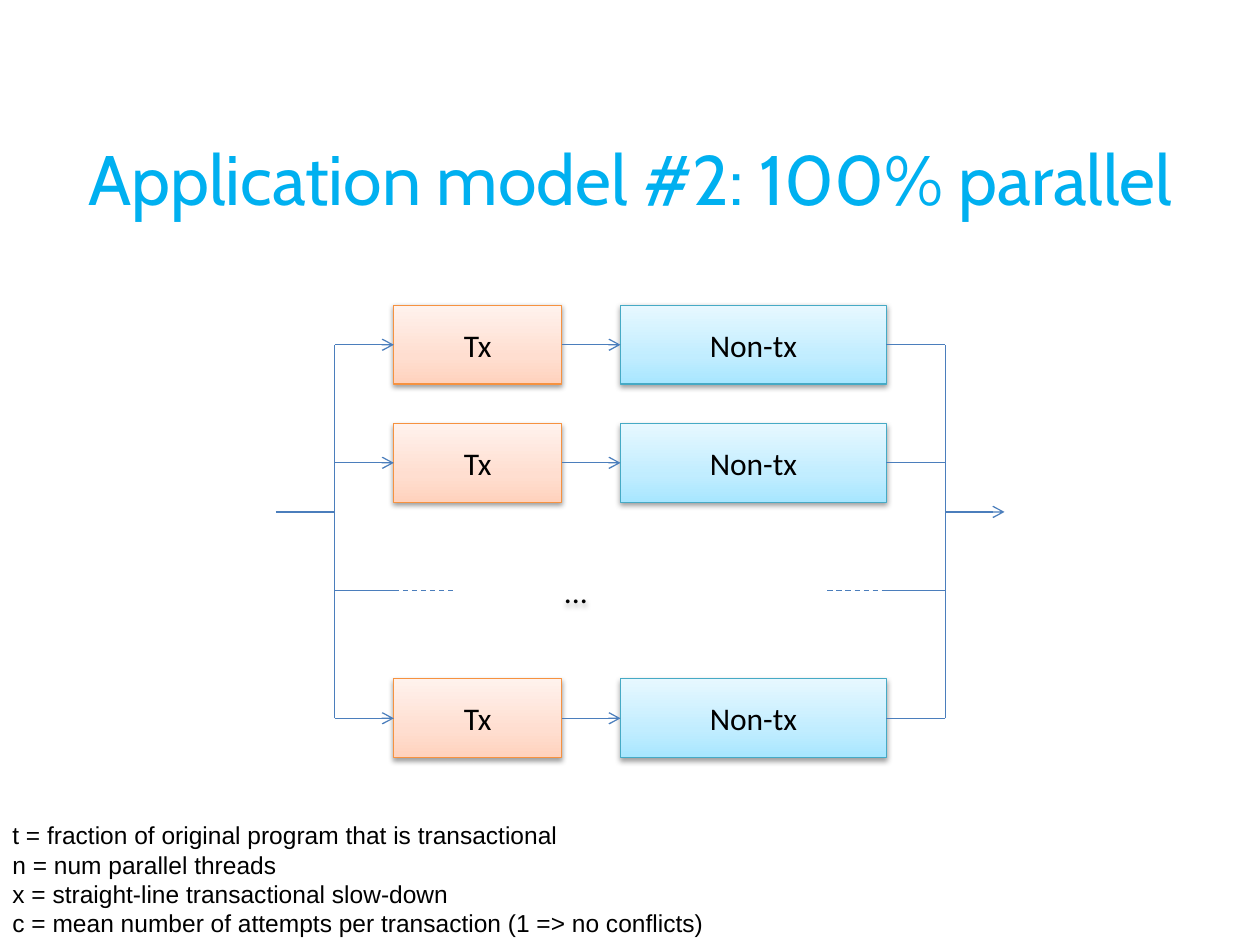
from copy import deepcopy

from lxml.etree import SubElement as Sub
from pptx import Presentation
from pptx.dml.color import RGBColor as RGB
from pptx.enum.dml import MSO_LINE as Dash
from pptx.enum.shapes import MSO_CONNECTOR as Conn, MSO_SHAPE as Kind
from pptx.enum.text import MSO_ANCHOR as Anchor, MSO_AUTO_SIZE as Auto, PP_ALIGN as Align
from pptx.oxml.ns import qn
from pptx.util import Cm, Pt

HUES = {
    "title": "00B0F0", "text": "000000", "wire": "4B7EBC",
    "tx": "F69240", "non": "46AAC5",
}
FADES = {
    "tx": ["FFD2BD", "FFDED0", "FFF2ED"],
    "non": ["A7E6FF", "C1EDFF", "E7F8FF"],
}
STOPS = [0, 0.35, 1]


def write(frame, text, size=18, font="Calibri", hue="text",
          align=Align.CENTER, anchor=Anchor.MIDDLE, wrap=True):
    frame.text = text
    frame.word_wrap = wrap
    frame.vertical_anchor = anchor
    for para in frame.paragraphs:
        para.alignment = align
        para.font.size = Pt(size)
        para.font.name = font
        para.font.color.rgb = RGB.from_string(HUES[hue])


class Deck:
    def __init__(self):
        self.prs = Presentation()
        self.prs.slide_width, self.prs.slide_height = Cm(25.4), Cm(19.05)
        self.slide = self.prs.slides.add_slide(self.prs.slide_layouts[5])

    def title(self, text, x, y, w, h):
        box = self.slide.shapes.title
        box.left, box.top, box.width, box.height = Cm(x), Cm(y), Cm(w), Cm(h)
        write(box.text_frame, text, size=40, font="Cabin", hue="title")

    def text(self, text, x, y, w, h, **style):
        box = self.slide.shapes.add_textbox(Cm(x), Cm(y), Cm(w), Cm(h))
        write(box.text_frame, text, **style)
        return box

    def shade(self, shape):
        shape.shadow.inherit = False
        effects = shape._element.spPr.find(qn("a:effectLst"))
        outer = Sub(effects, qn("a:outerShdw"), blurRad=str(Pt(3.1)),
                    dist=str(Pt(1.6)), dir="5400000", rotWithShape="0")
        tone = Sub(outer, qn("a:srgbClr"), val="000000")
        Sub(tone, qn("a:alpha"), val="38000")

    def box(self, text, kind, x, y, w, h):
        shape = self.slide.shapes.add_shape(Kind.RECTANGLE, Cm(x), Cm(y), Cm(w), Cm(h))
        shape.fill.gradient()
        shape.fill.gradient_angle = 90
        # A third stop joins the two that a new gradient has
        stops = shape._element.spPr.find(".//" + qn("a:gsLst"))
        stops.insert(1, deepcopy(stops[0]))
        for stop, place, tone in zip(shape.fill.gradient_stops, STOPS, FADES[kind]):
            stop.position = place
            stop.color.rgb = RGB.from_string(tone)
        shape.line.color.rgb = RGB.from_string(HUES[kind])
        shape.line.width = Pt(0.75)
        self.shade(shape)
        write(shape.text_frame, text)

    def wire(self, x1, y1, x2, y2, arrow=False, dash=False):
        wire = self.slide.shapes.add_connector(
            Conn.STRAIGHT, Cm(x1), Cm(y1), Cm(x2), Cm(y2))
        wire.line.color.rgb = RGB.from_string(HUES["wire"])
        wire.line.width = Pt(0.75)
        if dash:
            wire.line.dash_style = Dash.DASH
        props = wire._element.spPr
        if arrow:
            Sub(props.find(qn("a:ln")), qn("a:tailEnd"), type="arrow")
        Sub(props, qn("a:effectLst"))


def main():
    deck = Deck()
    deck.title("Application model #2: 100% parallel", 0, 1.98, 25.4, 3.18)

    # Columns, one gap apart, and row centres
    gap, high = 1.19, 1.59
    tx, tx_w, non_w = 7.94, 3.38, 5.36
    tx_end = tx + tx_w
    non = tx_end + gap
    end = non + non_w
    fork, join = tx - gap, end + gap
    rows = [6.95, 9.33, 14.48]
    more, port = 11.91, 10.32

    # Parallel threads
    for y in rows:
        deck.box("Tx", "tx", tx, y - high / 2, tx_w, high)
        deck.box("Non-tx", "non", non, y - high / 2, non_w, high)
        deck.wire(fork, y, tx, y, arrow=True)
        deck.wire(tx_end, y, non, y, arrow=True)
        deck.wire(end, y, join, y)

    # Further threads
    dots = deck.text("...", tx, more - high / 2, 7.34, high)
    deck.shade(dots)
    deck.wire(fork, more, tx, more)
    deck.wire(tx, more, tx + gap, more, dash=True)
    deck.wire(end - gap, more, end, more, dash=True)
    deck.wire(end, more, join, more)

    # Fork and join rails with entry and exit
    for x in (fork, join):
        deck.wire(x, rows[-1], x, rows[0])
    deck.wire(fork - gap, port, fork, port)
    deck.wire(join, port, join + gap, port, arrow=True)

    # Legend
    terms = [
        "t = fraction of original program that is transactional",
        "n = num parallel threads",
        "x = straight-line transactional slow-down",
        "c = mean number of attempts per transaction (1 => no conflicts)",
    ]
    key = deck.text("\n".join(terms), 0, 16.41, 14.5, 2.64, size=14, font="Arial",
                    align=Align.LEFT, anchor=Anchor.TOP, wrap=False)
    key.text_frame.auto_size = Auto.SHAPE_TO_FIT_TEXT

    deck.prs.save("out.pptx")


if __name__ == "__main__":
    main()
